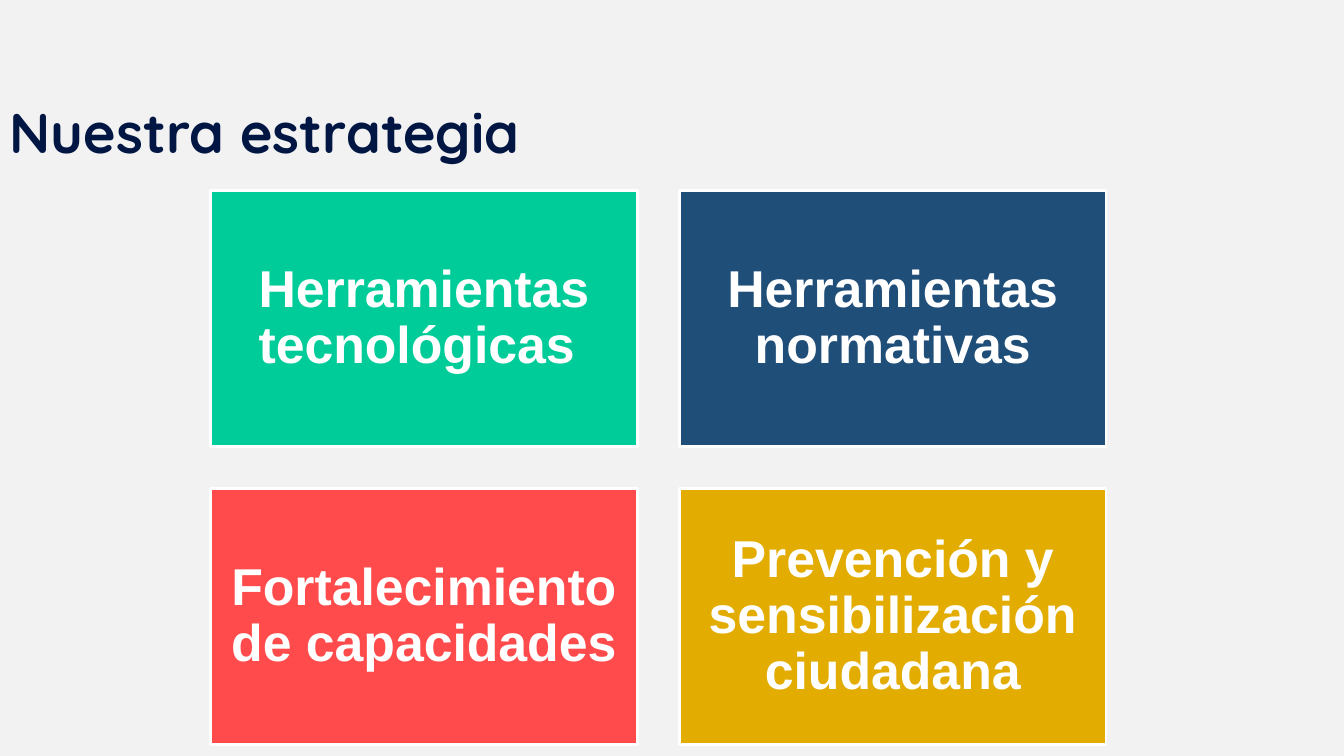
from pptx import Presentation
from pptx import util as u
from pptx.dml.color import RGBColor
from pptx.enum import shapes, text

BACKGROUND = RGBColor(0xF2, 0xF2, 0xF2)
NAVY = RGBColor(0x01, 0x16, 0x43)
WHITE = RGBColor(0xFF, 0xFF, 0xFF)
GREEN = RGBColor(0x00, 0xCC, 0x99)
BLUE = RGBColor(0x1F, 0x4E, 0x79)
RED = RGBColor(0xFF, 0x4B, 0x4B)
GOLD = RGBColor(0xE2, 0xAC, 0x00)

TITLE = "Nuestra estrategia"
PILLARS = [
    ("Herramientas tecnológicas ", GREEN),
    ("Herramientas normativas", BLUE),
    ("Fortalecimiento de capacidades", RED),
    ("Prevención y sensibilización ciudadana", GOLD),
]

SLIDE_W, SLIDE_H = 13.33, 7.5
COLUMNS = 2
GRID_LEFT, GRID_TOP = 2.09, 1.89
CARD_W, CARD_H = 4.23, 2.54
GAP = 0.42


def write(shape, content, *, size, font, color, align, inset_x, inset_y):
    frame = shape.text_frame
    frame.word_wrap = True
    frame.vertical_anchor = text.MSO_ANCHOR.MIDDLE
    frame.margin_left = frame.margin_right = u.Inches(inset_x)
    frame.margin_top = frame.margin_bottom = u.Inches(inset_y)
    paragraph = frame.paragraphs[0]
    paragraph.alignment = align
    paragraph.line_spacing = 0.9
    run = paragraph.add_run()
    run.text = content
    run.font.size = u.Pt(size)
    run.font.name = font
    run.font.bold = True
    run.font.color.rgb = color


def add_card(slide, index, label, fill):
    row, column = divmod(index, COLUMNS)
    card = slide.shapes.add_shape(
        shapes.MSO_SHAPE.RECTANGLE,
        u.Inches(GRID_LEFT + column * (CARD_W + GAP)),
        u.Inches(GRID_TOP + row * (CARD_H + GAP)),
        u.Inches(CARD_W), u.Inches(CARD_H))
    card.shadow.inherit = False
    card.fill.solid()
    card.fill.fore_color.rgb = fill
    card.line.color.rgb = WHITE
    card.line.width = u.Pt(2)
    write(card, label, size=37, font="Arial", color=WHITE,
          align=text.PP_ALIGN.CENTER, inset_x=0.15, inset_y=0.15)


def main():
    deck = Presentation()
    deck.slide_width, deck.slide_height = u.Inches(SLIDE_W), u.Inches(SLIDE_H)
    slide = deck.slides.add_slide(deck.slide_layouts[6])
    slide.background.fill.solid()
    slide.background.fill.fore_color.rgb = BACKGROUND

    title = slide.shapes.add_textbox(0, u.Inches(1), deck.slide_width, u.Inches(0.68))
    write(title, TITLE, size=40, font="Quicksand", color=NAVY,
          align=text.PP_ALIGN.LEFT, inset_x=0.1, inset_y=0.05)

    for index, (label, fill) in enumerate(PILLARS):
        add_card(slide, index, label, fill)
    deck.save("out.pptx")


if __name__ == "__main__":
    main()
